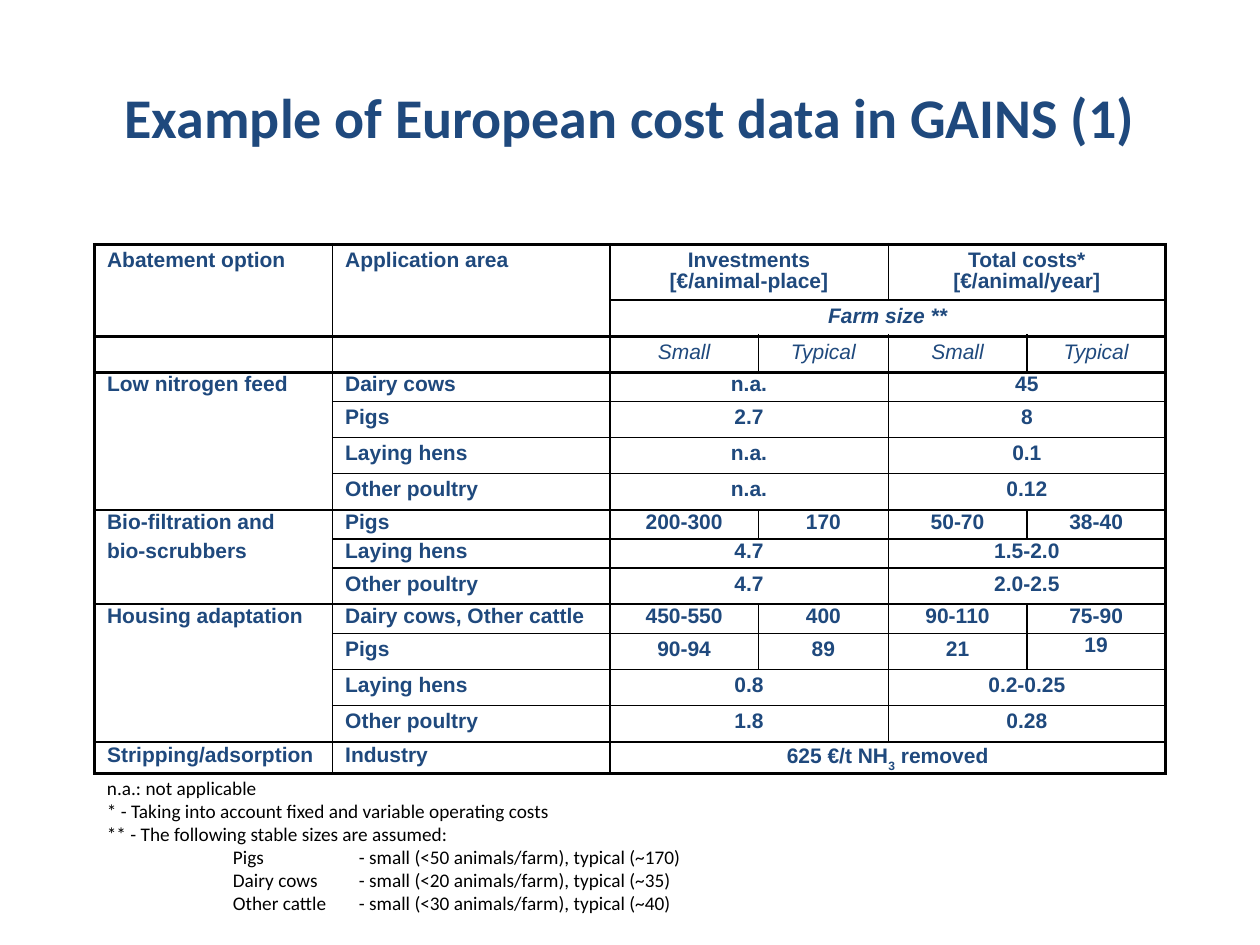
"""Build a slide with a table of European ammonia abatement costs."""
from dataclasses import dataclass
from typing import Optional

import lxml.etree
import pptx
import pptx.dml.color
import pptx.enum.text
import pptx.oxml.ns
import pptx.util

Inches, Pt = pptx.util.Inches, pptx.util.Pt
ALIGN, ANCHOR = pptx.enum.text.PP_ALIGN, pptx.enum.text.MSO_ANCHOR
qn = pptx.oxml.ns.qn

NAVY, BLACK = "1F497D", "000000"
COLUMNS = (1.89, 2.2, 1.18, 1.03, 1.1, 1.1)
HEADER_ROWS = 3
THICK_EDGES = (0, 2, 3, 15)
GROUP_EDGES = (0, 2, 3, 7, 10, 14, 15)


@dataclass
class Row:
    """Holds a row height and its texts, None continuing the cell to the left."""
    height: float
    texts: tuple


def data_row(height: float, option: str, area: str, *values: str) -> Row:
    """Spread one, two or four values over the four cost columns."""
    span = 4 // len(values)
    cells = [c for v in values for c in (v, *[None] * (span - 1))]
    return Row(height, (option, area, *cells))


ROWS = (
    data_row(0.44, "Abatement option", "Application area",
             "Investments\n[€/animal-place]", "Total costs*\n[€/animal/year]"),
    data_row(0.28, "", "", "Farm size **"),
    data_row(0.28, "", "", "Small", "Typical", "Small", "Typical"),
    data_row(0.23, "Low nitrogen feed", "Dairy cows", "n.a.", "45"),
    data_row(0.28, "", "Pigs", "2.7", "8"),
    data_row(0.28, "", "Laying hens", "n.a.", "0.1"),
    data_row(0.28, "", "Other poultry", "n.a.", "0.12"),
    data_row(0.23, "Bio-filtration and", "Pigs", "200-300", "170", "50-70", "38-40"),
    data_row(0.23, "bio-scrubbers", "Laying hens", "4.7", "1.5-2.0"),
    data_row(0.28, "", "Other poultry", "4.7", "2.0-2.5"),
    data_row(0.23, "Housing adaptation", "Dairy cows, Other cattle",
             "450-550", "400", "90-110", "75-90"),
    data_row(0.28, "", "Pigs", "90-94", "89", "21", "19"),
    data_row(0.28, "", "Laying hens", "0.8", "0.2-0.25"),
    data_row(0.28, "", "Other poultry", "1.8", "0.28"),
    data_row(0.25, "Stripping/adsorption", "Industry", "625 €/t NH|3| removed"),
)

NOTES = """n.a.: not applicable
* - Taking into account fixed and variable operating costs
** - The following stable sizes are assumed:
\tPigs\t- small (<50 animals/farm), typical (~170)
\tDairy cows\t- small (<20 animals/farm), typical (~35)
\tOther cattle\t- small (<30 animals/farm), typical (~40)"""


def rgb(color: str) -> pptx.dml.color.RGBColor:
    """Turn a hex string into a colour."""
    return pptx.dml.color.RGBColor.from_string(color)


def write(tf, text: str, *, size: float, font: str, color: str, align,
          bold: bool = False, italic: bool = False,
          spacing: Optional[float] = None, tabs: tuple = ()) -> None:
    """Write one paragraph per line, with text between bars as subscript."""
    for i, line in enumerate(text.split("\n")):
        p = tf.add_paragraph() if i else tf.paragraphs[0]
        p.alignment = align
        if spacing:
            p.line_spacing = spacing
        if tabs:
            stops = lxml.etree.SubElement(p._p.get_or_add_pPr(), qn("a:tabLst"))
            for pos in tabs:
                lxml.etree.SubElement(stops, qn("a:tab"), pos=str(int(Inches(pos))),
                                      algn="l")
        for j, part in enumerate(line.split("|")):
            r = p.add_run()
            r.text = part
            r.font.size, r.font.name = Pt(size), font
            r.font.bold, r.font.italic = bold, italic
            r.font.color.rgb = rgb(color)
            if j % 2:
                r._r.get_or_add_rPr().set("baseline", "-30000")


def set_border(cell, side: str, width: float) -> None:
    """Draw one side of a cell, or clear it when the width is zero."""
    ln = lxml.etree.SubElement(cell._tc.get_or_add_tcPr(), qn(f"a:ln{side}"),
                               w=str(int(Pt(width))))
    if width:
        fill = lxml.etree.SubElement(ln, qn("a:solidFill"))
        lxml.etree.SubElement(fill, qn("a:srgbClr"), val=BLACK)
    else:
        lxml.etree.SubElement(ln, qn("a:noFill"))


def row_edge(edge: int, col: int) -> float:
    """Give the width of a horizontal rule above row number edge."""
    if edge in THICK_EDGES:
        return 2
    open_edge = (col == 0 and edge not in GROUP_EDGES) or (col == 1 and edge == 1)
    return 0 if open_edge else 1


def column_edge(edge: int) -> float:
    """Give the width of a vertical rule left of column number edge."""
    return 2 if edge in (0, len(COLUMNS)) else 1


def size_empty_cell(cell) -> None:
    """Give an empty cell the line height of the table text."""
    p = cell.text_frame.paragraphs[0]
    end = lxml.etree.SubElement(p._p, qn("a:endParaRPr"), sz="1200")
    lxml.etree.SubElement(end, qn("a:latin"), typeface="Arial")


def fill_cell(cell, text: str, row: int, col: int, span: int) -> None:
    """Format one visible cell and write its text."""
    header = row < HEADER_ROWS
    last = col == len(COLUMNS) - 1
    cell.vertical_anchor = ANCHOR.TOP if header or last or not text else ANCHOR.MIDDLE
    set_border(cell, "L", column_edge(col))
    set_border(cell, "R", column_edge(col + span))
    set_border(cell, "T", row_edge(row, col))
    set_border(cell, "B", row_edge(row + 1, col))
    cell.fill.background()
    if text:
        write(cell.text_frame, text, size=12, font="Arial", color=NAVY,
              align=ALIGN.CENTER if col > 1 else ALIGN.JUSTIFY,
              bold=row != 2, italic=row in (1, 2), spacing=0.9 if header else 0.7)


def add_cost_table(s) -> None:
    """Add the cost table."""
    frame = s.shapes.add_table(len(ROWS), len(COLUMNS), Inches(0.75), Inches(1.94),
                               Inches(sum(COLUMNS)),
                               Inches(sum(row.height for row in ROWS)))
    table = frame.table
    table.first_row = table.horz_banding = False
    for column, width in zip(table.columns, COLUMNS):
        column.width = Inches(width)
    for i, row in enumerate(ROWS):
        table.rows[i].height = Inches(row.height)
        for j, text in enumerate(row.texts):
            cell = table.cell(i, j)
            if not text:
                size_empty_cell(cell)
            if text is None:
                continue
            span = 1
            while j + span < len(COLUMNS) and row.texts[j + span] is None:
                span += 1
            if span > 1:
                cell.merge(table.cell(i, j + span - 1))
            fill_cell(cell, text, i, j, span)


def main() -> None:
    """Build and save the slide."""
    prs = pptx.Presentation()
    prs.slide_width, prs.slide_height = Inches(10), Inches(7.5)
    s = prs.slides.add_slide(prs.slide_layouts[5])
    title = s.shapes.title
    title.left, title.top = Inches(0.5), Inches(0.3)
    title.width, title.height = Inches(9), Inches(1.25)
    title.text_frame.vertical_anchor = ANCHOR.MIDDLE
    write(title.text_frame, "Example of European cost data in GAINS (1)", size=32,
          font="Calibri", color=NAVY, align=ALIGN.CENTER, bold=True)
    add_cost_table(s)
    sp = s.shapes.add_textbox(Inches(0.75), Inches(6.11), Inches(4.78), Inches(1.2))
    tf = sp.text_frame
    tf.word_wrap = False
    tf.auto_size = pptx.enum.text.MSO_AUTO_SIZE.SHAPE_TO_FIT_TEXT
    tf.vertical_anchor = ANCHOR.MIDDLE
    write(tf, NOTES, size=11, font="Calibri", color=BLACK, align=ALIGN.JUSTIFY,
          tabs=(1, 2))
    prs.save("out.pptx")


if __name__ == "__main__":
    main()
